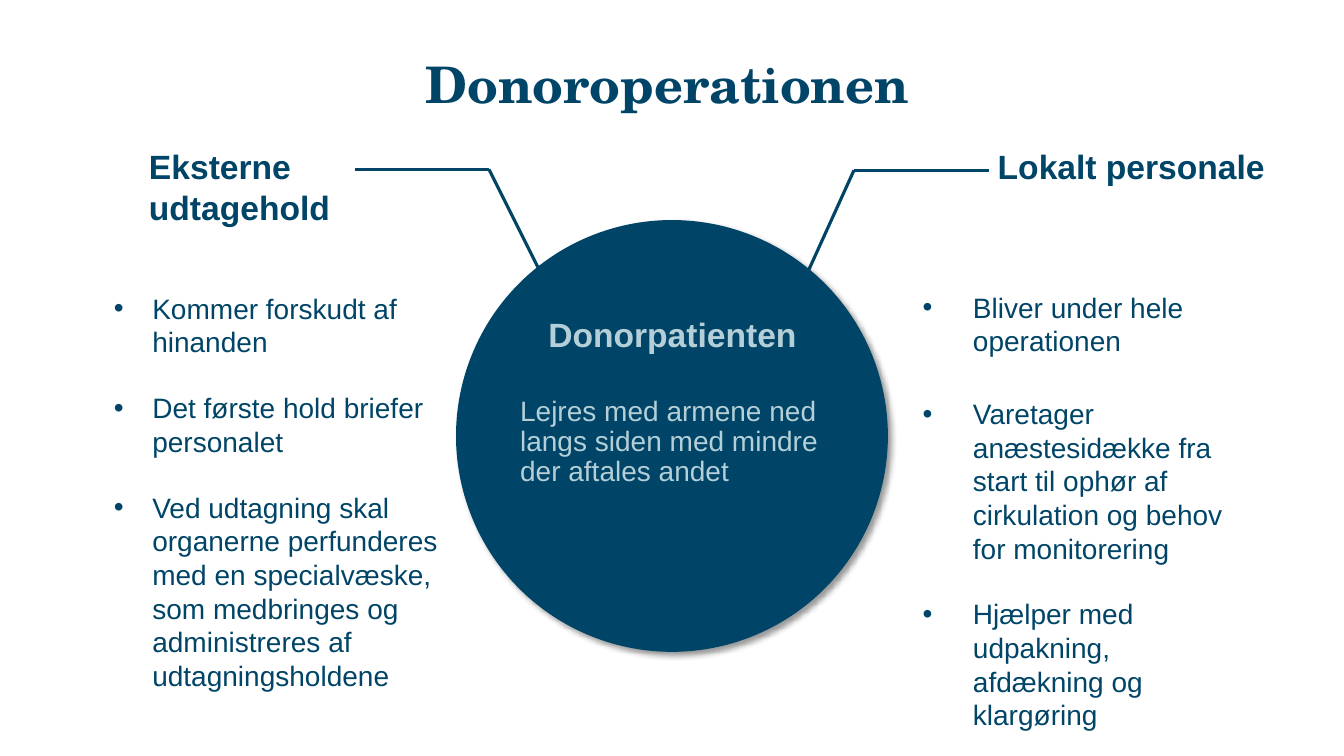
import lxml.etree
import pptx
import pptx.dml.color
import pptx.enum.shapes
import pptx.enum.text
import pptx.oxml
import pptx.oxml.ns
import pptx.util

NAVY = pptx.dml.color.RGBColor(0x00, 0x45, 0x67)
PALE = pptx.dml.color.RGBColor(0xB4, 0xCF, 0xD7)
ALIGN = pptx.enum.text.PP_ALIGN
WIDTH, HEIGHT = pptx.util.Inches(13.33), pptx.util.Inches(7.5)

TITLE_FONT = {"name": "TeX Gyre Schola", "size": pptx.util.Pt(36), "bold": True}
HEAD_FONT = {"name": "Arial", "size": pptx.util.Pt(24), "bold": True}
BODY_FONT = {"name": "Arial", "size": pptx.util.Pt(20), "bold": False}

TITLE = ("Donoroperationen", (7.05, 6.4, 85.2, 9.47))
CIRCLE = (33.98, 29.2, 32.03, 56.93)
LABELS = [
    ("Eksterne udtagehold", (10.35, 18.67, 16.05, 13.47), HEAD_FONT, NAVY, ALIGN.LEFT, 1),
    ("Lokalt personale", (70.97, 18.67, 26.41, 6.67), HEAD_FONT, NAVY, ALIGN.CENTER, 1),
    ("Donorpatienten", (38.78, 40.93, 22.51, 6.67), HEAD_FONT, PALE, ALIGN.CENTER, 1),
    ("Lejres med armene ned langs siden med mindre der aftales andet",
     (37.96, 51.87, 24.16, 35.07), BODY_FONT, PALE, ALIGN.LEFT, 0.9),
]
LISTS = [
    {"box": (7.73, 37.87, 25.88, 59.73), "indent": 0.38, "items": [
        ("Kommer forskudt af hinanden", 0),
        ("Det første hold briefer personalet", 23),
        ("Ved udtagning skal organerne perfunderes med en specialvæske, "
         "som medbringes og administreres af udtagningsholdene", 23)]},
    {"box": (67.89, 37.73, 25.66, 59.73), "indent": 0.5, "items": [
        ("Bliver under hele operationen", 0),
        ("Varetager anæstesidække fra start til ophør af cirkulation "
         "og behov for monitorering", 28),
        ("Hjælper med udpakning, afdækning og klargøring", 23)]},
]
LEADERS = [
    [(40.96, 38.67), (36.38, 22.4), (26.41, 22.4)],
    [(58.74, 41.33), (63.54, 22.53), (73.59, 22.53)],
]
SHADOW = (
    f'<a:effectLst {pptx.oxml.ns.nsdecls("a")}><a:outerShdw blurRad="50800" '
    'dist="38100" dir="2700000" algn="tl" rotWithShape="0"><a:srgbClr val="000000">'
    '<a:alpha val="40000"/></a:srgbClr></a:outerShdw></a:effectLst>'
)


def share(x, y):
    return round(WIDTH * x / 100), round(HEIGHT * y / 100)


def frame(box):
    return share(*box[:2]) + share(*box[2:])


def place(sp, box):
    for name, value in zip(("left", "top", "width", "height"), frame(box)):
        setattr(sp, name, value)


def prepare(tf):
    settings = {"word_wrap": True, "auto_size": pptx.enum.text.MSO_AUTO_SIZE.NONE,
                "vertical_anchor": pptx.enum.text.MSO_ANCHOR.TOP}
    for name, value in settings.items():
        setattr(tf, name, value)


def write(p, text, font, color, align, spacing=1, before=0):
    for name, value in {"alignment": align, "line_spacing": spacing,
                        "space_before": pptx.util.Pt(before)}.items():
        setattr(p, name, value)
    r = p.add_run()
    r.text = text
    for name, value in font.items():
        setattr(r.font, name, value)
    r.font.color.rgb = color


def add_bullet(p, indent):
    pPr = p._p.get_or_add_pPr()
    pPr.set("marL", str(pptx.util.Inches(indent)))
    pPr.set("indent", str(-pptx.util.Inches(indent)))
    for tag, key, value in (("a:buFont", "typeface", "Arial"), ("a:buChar", "char", "•")):
        lxml.etree.SubElement(pPr, pptx.oxml.ns.qn(tag)).set(key, value)


def add_leader(s, points):
    for start, end in zip(points, points[1:]):
        line = s.shapes.add_connector(
            pptx.enum.shapes.MSO_CONNECTOR.STRAIGHT, *share(*start), *share(*end))
        line.line.color.rgb = NAVY
        line.line.width = pptx.util.Pt(2.25)
        lxml.etree.SubElement(line._element.spPr, pptx.oxml.ns.qn("a:effectLst"))


def add_circle(s):
    sp = s.shapes.add_shape(pptx.enum.shapes.MSO_SHAPE.OVAL, *frame(CIRCLE))
    sp.fill.solid()
    sp.fill.fore_color.rgb = NAVY
    sp.line.color.rgb = NAVY
    sp.line.width = pptx.util.Pt(1)
    sp._element.spPr.append(pptx.oxml.parse_xml(SHADOW))


def main():
    prs = pptx.Presentation()
    prs.slide_width, prs.slide_height = WIDTH, HEIGHT
    s = prs.slides.add_slide(prs.slide_layouts[3])

    text, box = TITLE
    title = s.shapes.title
    place(title, box)
    prepare(title.text_frame)
    write(title.text_frame.paragraphs[0], text, TITLE_FONT, NAVY, ALIGN.CENTER)

    for sp, column in zip(list(s.placeholders)[1:], LISTS):
        place(sp, column["box"])
        tf = sp.text_frame
        prepare(tf)
        for i, (text, before) in enumerate(column["items"]):
            p = tf.add_paragraph() if i else tf.paragraphs[0]
            add_bullet(p, column["indent"])
            write(p, text, BODY_FONT, NAVY, ALIGN.LEFT, before=before)

    for points in LEADERS:
        add_leader(s, points)
    add_circle(s)

    for text, box, font, color, align, spacing in LABELS:
        tf = s.shapes.add_textbox(*frame(box)).text_frame
        prepare(tf)
        write(tf.paragraphs[0], text, font, color, align, spacing)

    prs.save("out.pptx")


if __name__ == "__main__":
    main()
